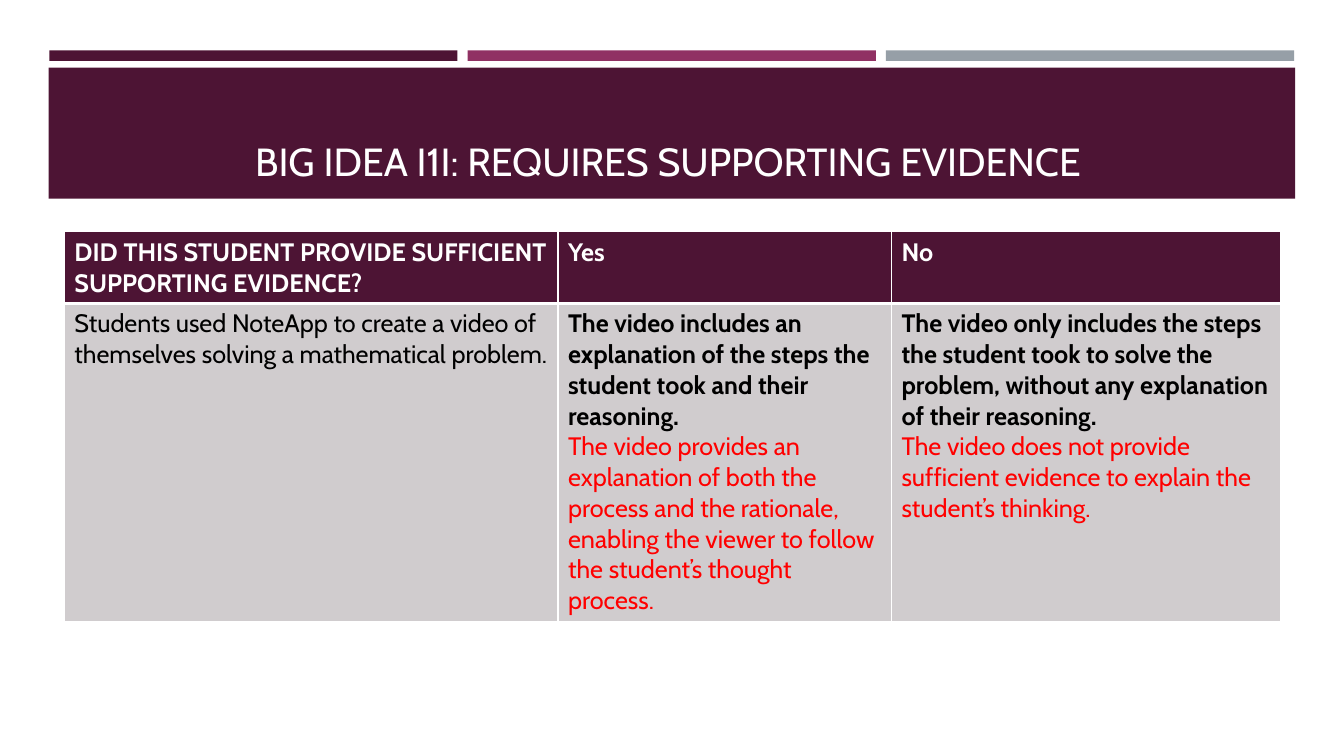
from dataclasses import dataclass

from lxml import etree
from pptx import Presentation
from pptx import util as u
from pptx.dml.color import RGBColor
from pptx.enum import shapes, text
from pptx.oxml import ns

PLUM = RGBColor(0x4D, 0x14, 0x34)
MAGENTA = RGBColor(0x90, 0x31, 0x63)
SLATE = RGBColor(0x96, 0x9F, 0xA7)
ASH = RGBColor(0xD0, 0xCC, 0xCE)
WHITE = RGBColor(0xFF, 0xFF, 0xFF)
BLACK = RGBColor(0, 0, 0)
RED = RGBColor(0xFF, 0, 0)
FONT = "Cabin"

STRIPE_LEFT, STRIPE_STEP = 35.2, 298.8
COLUMN_WIDTHS = (352.6, 238.2, 277.6)
ROW_HEIGHTS = (49.6, 224)


@dataclass(frozen=True)
class Bar:
    left: float
    top: float
    width: float
    height: float
    color: RGBColor


@dataclass(frozen=True)
class Line:
    wording: str
    color: RGBColor
    bold: bool


@dataclass(frozen=True)
class Answer:
    lines: tuple[Line, ...]
    fill: RGBColor
    top_border: float
    bottom_border: float


def header(wording: str) -> Answer:
    return Answer((Line(wording, WHITE, True),), PLUM, 1, 3)


def body(*lines: Line) -> Answer:
    return Answer(lines, ASH, 3, 1)


BARS = [
    Bar(STRIPE_LEFT + i * STRIPE_STEP, 36, 291.6, 7.5, color)
    for i, color in enumerate((PLUM, MAGENTA, SLATE))
] + [Bar(34.8, 48.4, 890.4, 93.6, PLUM)]

EVIDENCE = (
    (
        header("DID THIS STUDENT PROVIDE SUFFICIENT SUPPORTING EVIDENCE?"),
        header("Yes"),
        header("No"),
    ),
    (
        body(Line("Students used NoteApp to create a video of themselves solving "
                  "a mathematical problem.", BLACK, False)),
        body(
            Line("The video includes an explanation of the steps the student took "
                 "and their reasoning.", BLACK, True),
            Line("The video provides an explanation of both the process and the "
                 "rationale, enabling the viewer to follow the student’s thought "
                 "process.", RED, False),
        ),
        body(
            Line("The video only includes the steps the student took to solve the "
                 "problem, without any explanation of their reasoning.", BLACK, True),
            Line("The video does not provide sufficient evidence to explain the "
                 "student’s thinking.", RED, False),
        ),
    ),
)


def apply(target, formats: dict) -> None:
    for name, value in formats.items():
        setattr(target, name, value)


def write(paragraph, line: Line, size: float) -> None:
    run = paragraph.add_run()
    run.text = line.wording
    apply(run.font, {"name": FONT, "size": u.Pt(size), "bold": line.bold})
    run.font.color.rgb = line.color


def draw_bar(slide, bar: Bar) -> None:
    stripe = slide.shapes.add_shape(
        shapes.MSO_SHAPE.RECTANGLE,
        *map(u.Pt, (bar.left, bar.top, bar.width, bar.height)),
    )
    stripe.shadow.inherit = False
    stripe.fill.solid()
    stripe.fill.fore_color.rgb = bar.color
    stripe.line.fill.background()


def draw_title(slide, line: Line) -> None:
    title = slide.shapes.title
    apply(title, {"left": u.Pt(46), "top": u.Pt(55.4),
                  "width": u.Pt(868.4), "height": u.Pt(80)})
    apply(title.text_frame, {"vertical_anchor": text.MSO_ANCHOR.BOTTOM,
                             "auto_size": text.MSO_AUTO_SIZE.NONE,
                             "word_wrap": True})
    heading = title.text_frame.paragraphs[0]
    heading.alignment = text.PP_ALIGN.CENTER
    write(heading, line, 28)
    slide.shapes._spTree.append(title._element)


def draw_borders(cell, answer: Answer) -> None:
    widths = {"lnL": 1, "lnR": 1, "lnT": answer.top_border,
              "lnB": answer.bottom_border}
    properties = cell._tc.get_or_add_tcPr()
    for position, (side, width) in enumerate(widths.items()):
        border = etree.Element(ns.qn(f"a:{side}"), w=str(u.Pt(width)))
        fill = etree.SubElement(border, ns.qn("a:solidFill"))
        etree.SubElement(fill, ns.qn("a:srgbClr"), val=str(WHITE))
        properties.insert(position, border)


def draw_answer(cell, answer: Answer) -> None:
    cell.fill.solid()
    cell.fill.fore_color.rgb = answer.fill
    draw_borders(cell, answer)
    frame = cell.text_frame
    for i, line in enumerate(answer.lines):
        write(frame.add_paragraph() if i else frame.paragraphs[0], line, 18)


def draw_evidence(slide) -> None:
    table = slide.shapes.add_table(
        len(ROW_HEIGHTS), len(COLUMN_WIDTHS), u.Pt(46), u.Pt(165.6),
        u.Pt(sum(COLUMN_WIDTHS)), u.Pt(sum(ROW_HEIGHTS)),
    ).table
    table.horz_banding = False
    for column, width in zip(table.columns, COLUMN_WIDTHS):
        column.width = u.Pt(width)
    for row, height, answers in zip(table.rows, ROW_HEIGHTS, EVIDENCE):
        row.height = u.Pt(height)
        for cell, answer in zip(row.cells, answers):
            draw_answer(cell, answer)


def main() -> None:
    deck = Presentation()
    apply(deck, {"slide_width": u.Pt(960), "slide_height": u.Pt(540)})
    slide = deck.slides.add_slide(deck.slide_layouts.get_by_name("Title Only"))
    for bar in BARS:
        draw_bar(slide, bar)
    draw_title(slide, Line("BIG IDEA I1I: REQUIRES SUPPORTING EVIDENCE ", WHITE, False))
    draw_evidence(slide)
    deck.save("out.pptx")


if __name__ == "__main__":
    main()
